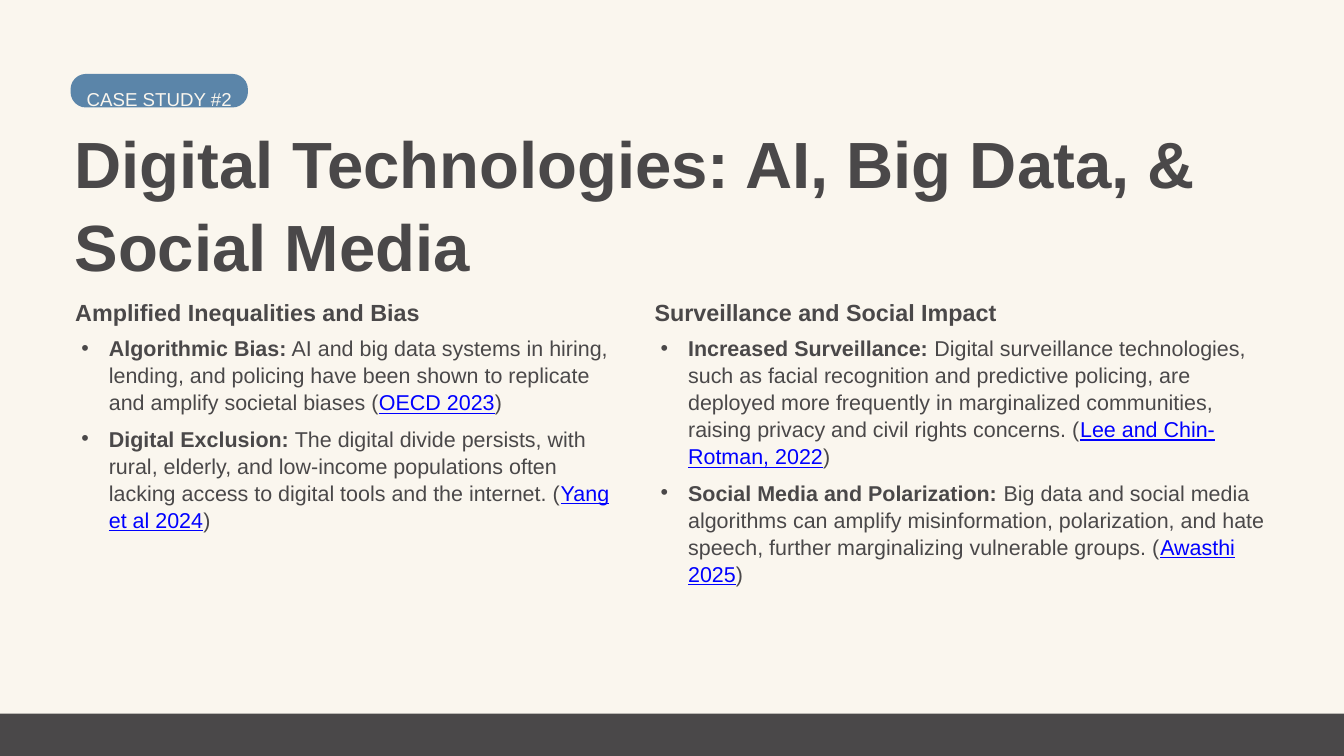
"""Builds the case study slide on digital technologies."""
from lxml import etree
from pptx import Presentation
from pptx.dml.color import RGBColor
from pptx.enum.shapes import MSO_SHAPE
from pptx.enum.text import MSO_ANCHOR, MSO_AUTO_SIZE, PP_ALIGN
from pptx.oxml.ns import qn
from pptx.util import Inches, Pt

RECTANGLE, ROUNDED = MSO_SHAPE.RECTANGLE, MSO_SHAPE.ROUNDED_RECTANGLE
TOP, LEFT, NO_AUTOFIT = MSO_ANCHOR.TOP, PP_ALIGN.LEFT, MSO_AUTO_SIZE.NONE

THEME = {
    "font": "Arial", "paper": "FAF6EE", "ink": "4A4849", "tag": "5B85A9", "link": "0000FF",
    "title": 70, "heading": 25, "body": 23, "label": 20,
}
LINE_SPACING = 1.05

TAG = "CASE STUDY #2"
TITLE = "Digital Technologies: AI, Big Data, & Social Media"
COLUMNS = [
    {"left": 1.12, "width": 8.16, "height": 2.85, "heading": "Amplified Inequalities and Bias", "points": [
        ("Algorithmic Bias:",
         " AI and big data systems in hiring, lending, and policing have been shown to replicate "
         "and amplify societal biases (", "OECD 2023"),
        ("Digital Exclusion:",
         " The digital divide persists, with rural, elderly, and low-income populations often "
         "lacking access to digital tools and the internet. (", "Yang et al 2024"),
    ]},
    {"left": 9.74, "width": 9.13, "height": 3.63, "heading": "Surveillance and Social Impact", "points": [
        ("Increased Surveillance: ",
         "Digital surveillance technologies, such as facial recognition and predictive policing, "
         "are deployed more frequently in marginalized communities, raising privacy and civil "
         "rights concerns. (", "Lee and Chin-Rotman, 2022"),
        ("Social Media and Polarization: ",
         "Big data and social media algorithms can amplify misinformation, polarization, and hate "
         "speech, further marginalizing vulnerable groups. (", "Awasthi 2025"),
    ]},
]


def color(name):
    return RGBColor.from_string(THEME[name])


def style(run, size, ink="ink", bold=False, underline=False):
    font = run.font
    font.name, font.size, font.bold = THEME["font"], Pt(THEME[size]), bold
    font.underline = underline
    font.color.rgb = color(ink)


def prepare(shape):
    frame = shape.text_frame
    frame.margin_left = frame.margin_top = frame.margin_right = frame.margin_bottom = 0
    frame.word_wrap, frame.auto_size, frame.vertical_anchor = True, NO_AUTOFIT, TOP
    return frame


def add_box(slide, *bounds):
    return prepare(slide.shapes.add_textbox(*map(Inches, bounds)))


def write_line(frame, text, size, ink="ink", bold=True, spacing=LINE_SPACING):
    frame.text = text
    paragraph = frame.paragraphs[0]
    paragraph.alignment, paragraph.line_spacing = LEFT, spacing
    style(paragraph.runs[0], size, ink, bold)


def add_block(slide, kind, fill, *bounds):
    shape = slide.shapes.add_shape(kind, *map(Inches, bounds))
    shape.shadow.inherit = False
    shape.fill.solid()
    shape.fill.fore_color.rgb = color(fill)
    shape.line.fill.background()
    return shape


def add_bullet(paragraph):
    properties = paragraph._p.get_or_add_pPr()
    properties.set("marL", str(Inches(0.5)))
    properties.set("indent", str(Inches(-0.41)))
    bullet_color = etree.SubElement(properties, qn("a:buClr"))
    etree.SubElement(bullet_color, qn("a:srgbClr"), val=THEME["ink"])
    etree.SubElement(properties, qn("a:buFont"), typeface=THEME["font"])
    etree.SubElement(properties, qn("a:buChar"), char="•")


def write_point(paragraph, lead, detail, source):
    add_bullet(paragraph)
    paragraph.level, paragraph.line_spacing = 1, LINE_SPACING
    pieces = [(lead, {"bold": True}), (detail, {}),
              (source, {"ink": "link", "underline": True}), (")", {})]
    for text, look in pieces:
        run = paragraph.add_run()
        run.text = text
        style(run, "body", **look)


def add_column(slide, column):
    left, width = column["left"], column["width"]
    write_line(add_box(slide, left, 4.42, width, 0.42), column["heading"], "heading")
    frame = add_box(slide, left, 4.97, width, column["height"])
    for index, point in enumerate(column["points"]):
        paragraph = frame.add_paragraph() if index else frame.paragraphs[0]
        write_point(paragraph, *point)
        if index:
            paragraph.space_before = Pt(10)


def main():
    presentation = Presentation()
    presentation.slide_width, presentation.slide_height = Inches(20), Inches(11.25)
    slide = presentation.slides.add_slide(presentation.slide_layouts[5])
    slide.background.fill.solid()
    slide.background.fill.fore_color.rgb = color("paper")

    add_block(slide, RECTANGLE, "ink", -0.94, 10.62, 21.36, 0.63)
    for column in COLUMNS:
        add_column(slide, column)

    title = slide.shapes.title
    title.left, title.top, title.width, title.height = map(Inches, (1.11, 1.78, 17.76, 2.36))
    write_line(prepare(title), TITLE, "title")

    tag = add_block(slide, ROUNDED, "tag", 1.05, 1.1, 2.64, 0.5)
    tag.adjustments[0] = 0.46
    write_line(add_box(slide, 1.29, 1.18, 9.33, 0.34), TAG, "label", "paper", False, 1.4)

    presentation.save("out.pptx")


if __name__ == "__main__":
    main()
